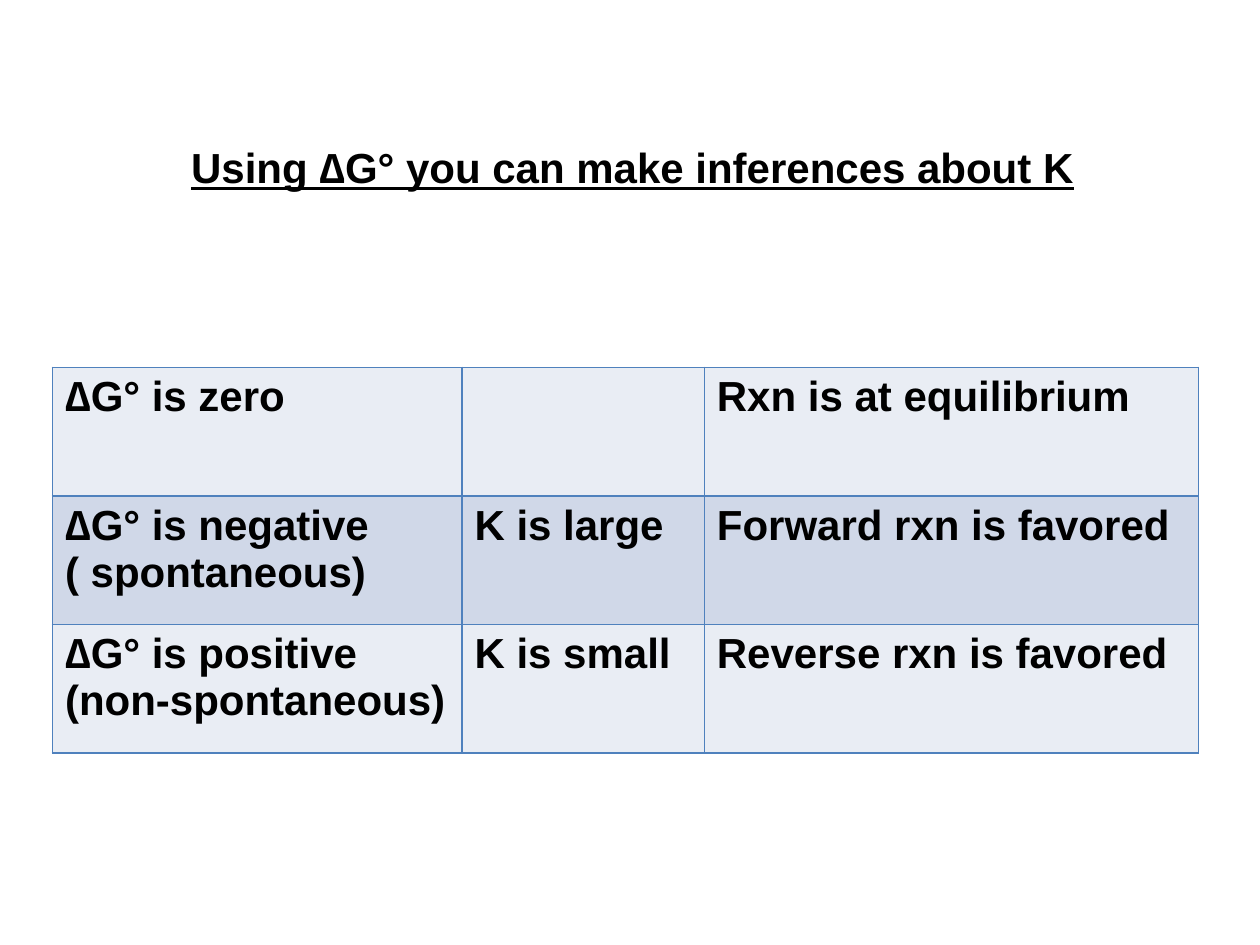
from dataclasses import dataclass

from lxml import etree
from pptx import Presentation
from pptx.dml.color import RGBColor
from pptx.enum.text import MSO_ANCHOR, MSO_AUTO_SIZE, PP_ALIGN
from pptx.oxml.ns import qn
from pptx.util import Pt

LEFT = PP_ALIGN.LEFT
TOP = MSO_ANCHOR.TOP
FIT_SHAPE = MSO_AUTO_SIZE.SHAPE_TO_FIT_TEXT
TITLE_ONLY = 5

TITLE = "Using ∆G° you can make inferences about K"
INFERENCES = [
    (["∆G° is zero"], [], ["Rxn is at equilibrium"]),
    (["∆G° is negative", "( spontaneous)"], ["K is large"], ["Forward rxn is favored"]),
    (["∆G° is positive", "(non-spontaneous)"], ["K is small"], ["Reverse rxn is favored"]),
]
COLUMN_WIDTHS = (234, 138.5, 282.5)
ROW_HEIGHT = 73.5
TABLE_LEFT, TABLE_TOP = 30, 210
TITLE_BOX = (102, 77.5, 523.5, 36)


@dataclass(frozen=True)
class Theme:
    font: str = "Arial"
    size: float = 24
    text: str = "000000"
    border: str = "4F81BD"
    border_width: float = 1
    bands: tuple = ("E9EDF4", "D0D8E8")


THEME = Theme()


def add_text(paragraph, text, underline=None):
    run = paragraph.add_run()
    run.text = text
    font = run.font
    font.name = THEME.font
    font.size = Pt(THEME.size)
    font.bold = True
    font.underline = underline
    font.color.rgb = RGBColor.from_string(THEME.text)


def add_borders(cell):
    properties = cell._tc.get_or_add_tcPr()
    for side in ("lnL", "lnR", "lnT", "lnB"):
        line = etree.SubElement(properties, qn(f"a:{side}"), w=str(Pt(THEME.border_width)))
        fill = etree.SubElement(line, qn("a:solidFill"))
        etree.SubElement(fill, qn("a:srgbClr"), val=THEME.border)


def add_title(slide):
    title = slide.shapes.title
    title.left, title.top, title.width, title.height = map(Pt, TITLE_BOX)
    frame = title.text_frame
    frame.word_wrap = False
    frame.auto_size = FIT_SHAPE
    frame.vertical_anchor = TOP
    paragraph = frame.paragraphs[0]
    paragraph.alignment = LEFT
    add_text(paragraph, TITLE, underline=True)


def fill_cell(cell, lines, color):
    add_borders(cell)
    cell.fill.solid()
    cell.fill.fore_color.rgb = RGBColor.from_string(color)
    frame = cell.text_frame
    for index, line in enumerate(lines):
        paragraph = frame.add_paragraph() if index else frame.paragraphs[0]
        add_text(paragraph, line)


def add_inference_table(slide):
    table = slide.shapes.add_table(
        len(INFERENCES), len(COLUMN_WIDTHS), Pt(TABLE_LEFT), Pt(TABLE_TOP),
        Pt(sum(COLUMN_WIDTHS)), Pt(ROW_HEIGHT * len(INFERENCES)),
    ).table
    table.first_row = False
    for column, width in zip(table.columns, COLUMN_WIDTHS):
        column.width = Pt(width)
    for index, (row, contents) in enumerate(zip(table.rows, INFERENCES)):
        row.height = Pt(ROW_HEIGHT)
        for cell, lines in zip(row.cells, contents):
            fill_cell(cell, lines, THEME.bands[index % len(THEME.bands)])


def main():
    presentation = Presentation()
    presentation.slide_width, presentation.slide_height = Pt(720), Pt(540)
    slide = presentation.slides.add_slide(presentation.slide_layouts[TITLE_ONLY])
    add_title(slide)
    add_inference_table(slide)
    presentation.save("out.pptx")


if __name__ == "__main__":
    main()
